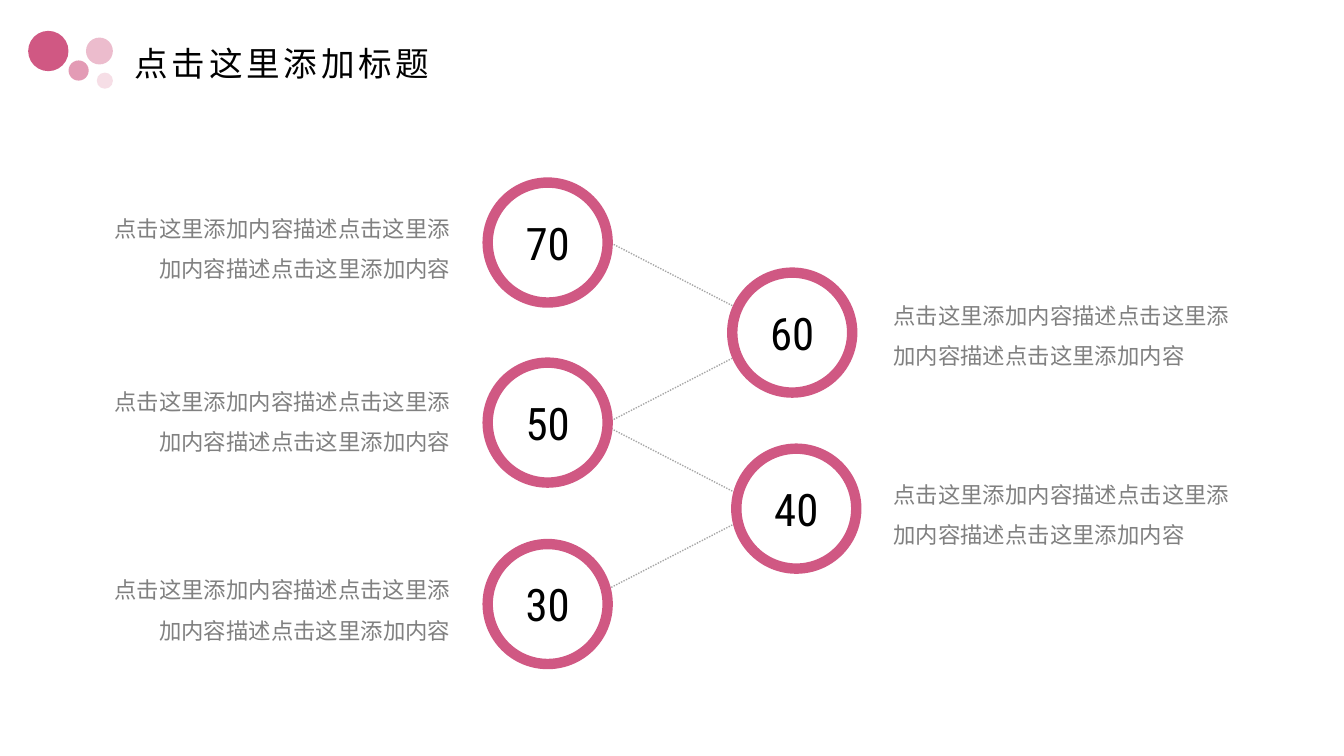
from typing import NamedTuple

from lxml import etree
from pptx import Presentation
from pptx import util as u
from pptx.dml.color import RGBColor
from pptx.enum import dml, shapes, text
from pptx.oxml.ns import qn

ROSE = "D05883"
GREY = "808080"
RING = 0.97
BODY = "点击这里添加内容描述点击这里添加内容描述点击这里添加内容"


class Dot(NamedTuple):
    x: float
    y: float
    size: float
    fill: str


class Step(NamedTuple):
    value: str
    x: float
    y: float
    note_x: float
    note_y: float
    align: text.PP_ALIGN


class Link(NamedTuple):
    y1: float
    y2: float


LEFT, RIGHT = text.PP_ALIGN.LEFT, text.PP_ALIGN.RIGHT
DOTS = [
    Dot(0.21, 0.23, 0.3, ROSE),
    Dot(0.51, 0.45, 0.15, "E39BB5"),
    Dot(0.64, 0.28, 0.2, "ECBCCD"),
    Dot(0.72, 0.54, 0.12, "F6DEE6"),
]
STEPS = [
    Step("70", 3.59, 1.32, 0.61, 1.45, RIGHT),
    Step("60", 5.41, 1.99, 6.55, 2.1, LEFT),
    Step("50", 3.59, 2.66, 0.61, 2.74, RIGHT),
    Step("40", 5.44, 3.3, 6.55, 3.43, LEFT),
    Step("30", 3.59, 4.01, 0.61, 4.14, RIGHT),
]
LINKS = [Link(1.8, 2.28), Link(3.14, 2.66), Link(3.18, 3.66), Link(4.38, 3.9)]


def color(code: str) -> RGBColor:
    return RGBColor.from_string(code)


def style(para, size: float, face: str, code: str):
    run = para.runs[0]
    run.font.size = u.Pt(size)
    run.font.name = face
    run.font.color.rgb = color(code)
    return run


def add_round(slide, kind, x: float, y: float, size: float, fill: str):
    item = slide.shapes.add_shape(
        kind, u.Inches(x), u.Inches(y), u.Inches(size), u.Inches(size))
    item.shadow.inherit = False
    item.fill.solid()
    item.fill.fore_color.rgb = color(fill)
    item.line.fill.background()
    return item


def add_title(slide, words: str) -> None:
    title = slide.shapes.title
    title.left, title.top = u.Inches(0.9), u.Inches(0.19)
    title.width, title.height = u.Inches(8.62), u.Inches(0.59)
    frame = title.text_frame
    frame.text = words
    frame.auto_size = text.MSO_AUTO_SIZE.NONE
    frame.vertical_anchor = text.MSO_ANCHOR.MIDDLE
    para = frame.paragraphs[0]
    para.alignment = LEFT
    para.line_spacing = 0.9
    face = "Noto Sans CJK SC"
    props = style(para, 18, face, "000000").font._element
    props.set("spc", "200")
    east = etree.Element(qn("a:ea"), typeface=face)
    props.find(qn("a:latin")).addnext(east)


def add_link(slide, link: Link) -> None:
    line = slide.shapes.add_connector(
        shapes.MSO_CONNECTOR.STRAIGHT,
        u.Inches(4.53), u.Inches(link.y1), u.Inches(5.46), u.Inches(link.y2))
    line.line.color.rgb = color("A6A6A6")
    line.line.width = u.Pt(0.75)
    line.line.dash_style = dml.MSO_LINE.ROUND_DOT
    etree.SubElement(line._element.spPr, qn("a:effectLst"))


def add_ring(slide, step: Step) -> None:
    ring = add_round(slide, shapes.MSO_SHAPE.DONUT, step.x, step.y, RING, ROSE)
    ring.adjustments[0] = 0.08
    frame = ring.text_frame
    frame.text = step.value
    frame.vertical_anchor = text.MSO_ANCHOR.MIDDLE
    para = frame.paragraphs[0]
    para.alignment = text.PP_ALIGN.CENTER
    style(para, 24, "Roboto Condensed", "000000")


def add_note(slide, step: Step) -> None:
    box = slide.shapes.add_textbox(
        u.Inches(step.note_x), u.Inches(step.note_y),
        u.Inches(2.84), u.Inches(0.83))
    frame = box.text_frame
    frame.word_wrap = True
    frame.text = BODY
    para = frame.paragraphs[0]
    para.alignment = step.align
    para.line_spacing = 1.5
    style(para, 12, "Calibri", GREY)


def main() -> None:
    deck = Presentation()
    deck.slide_width = u.Inches(10)
    deck.slide_height = u.Inches(10 * 9 / 16)
    slide = deck.slides.add_slide(deck.slide_layouts[5])
    for dot in DOTS:
        add_round(slide, shapes.MSO_SHAPE.OVAL, *dot)
    add_title(slide, "点击这里添加标题")
    for link in LINKS:
        add_link(slide, link)
    for step in STEPS:
        add_ring(slide, step)
        add_note(slide, step)
    deck.save("out.pptx")


if __name__ == "__main__":
    main()
